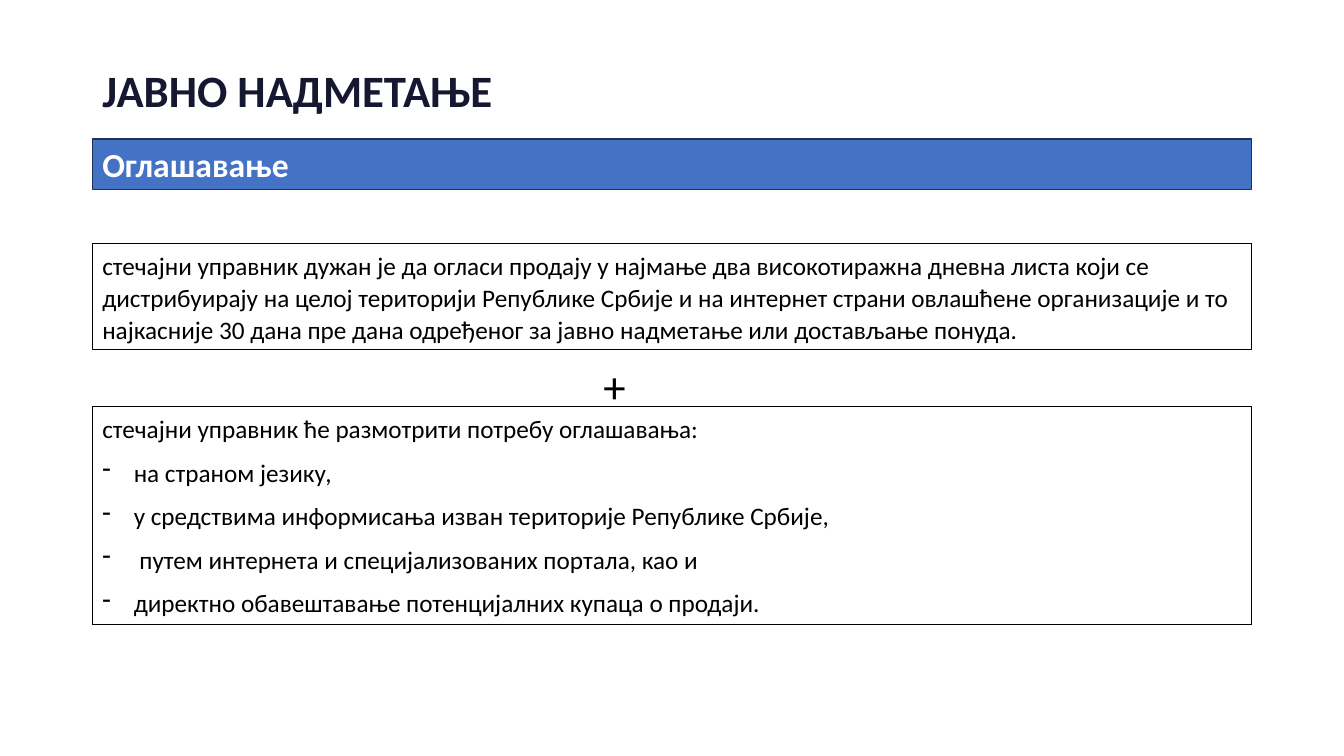
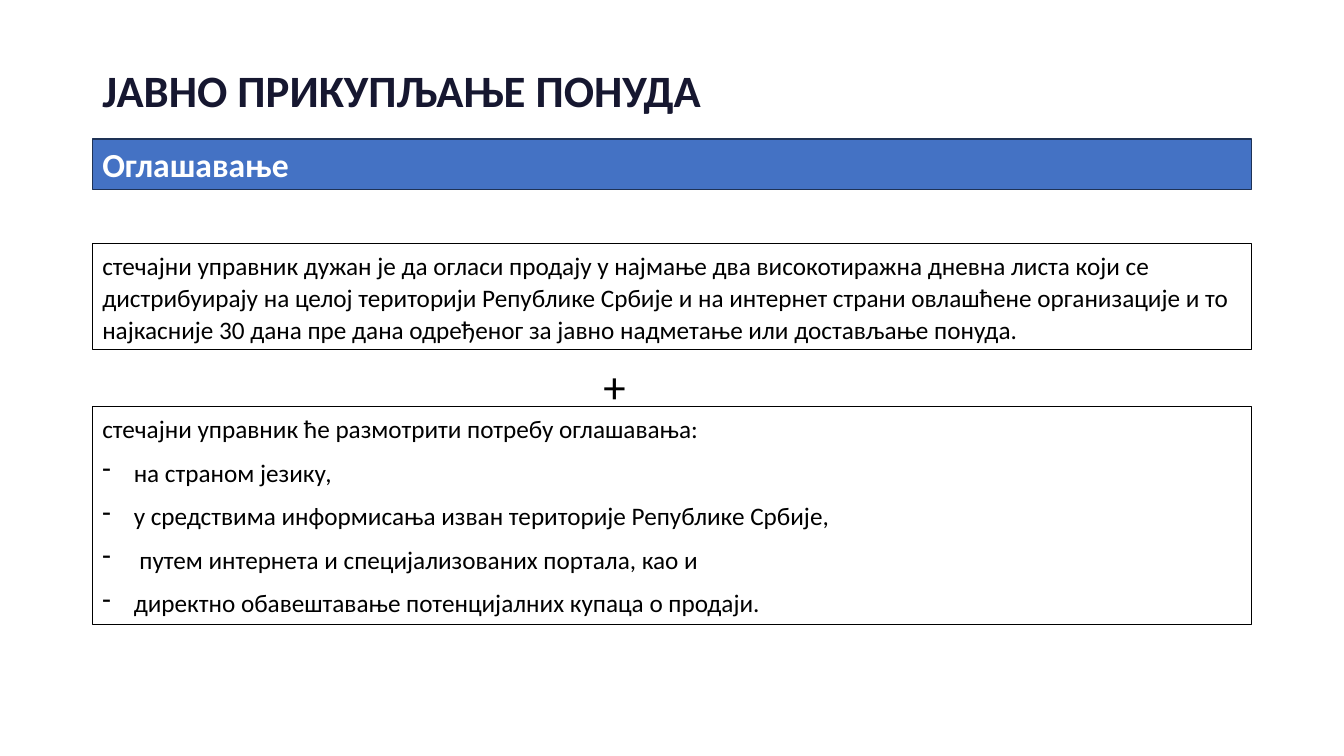
from lxml.etree import SubElement
from pptx import Presentation
from pptx.dml.color import RGBColor
from pptx.enum.shapes import MSO_SHAPE
from pptx.enum.text import MSO_ANCHOR, MSO_AUTO_SIZE, PP_ALIGN
from pptx.oxml.ns import qn
from pptx.util import Pt

COLORS = {
    "title": "161730",
    "band": "4472C4",
    "band_line": "1E3256",
    "band_text": "FFFFFF",
    "body": "000000",
}
FONT = "Calibri"
LEFT, WIDTH = 66, 828
BULLET_INDENT = 22.5

TITLES = ["ЈАВНО НАДМЕТАЊЕ", "ЈАВНО ПРИКУПЉАЊЕ ПОНУДА"]
NOTICE = (
    "стечајни управник дужан је да огласи продају у најмање два високотиражна "
    "дневна листа који се дистрибуирају на целој територији Републике Србије и на "
    "интернет страни овлашћене организације и то најкасније 30 дана пре дана "
    "одређеног за јавно надметање или достављање понуда."
)
CHANNELS_INTRO = "стечајни управник ће размотрити потребу оглашавања:"
CHANNELS = [
    "на страном језику,",
    "у средствима информисања изван територије Републике Србије,",
    " путем интернета и специјализованих портала, као и",
    "директно обавештавање потенцијалних купаца о продаји.",
]


def rgb(name):
    return RGBColor.from_string(COLORS[name])


class Deck:
    def __init__(self):
        self.presentation = Presentation()
        self.presentation.slide_width = Pt(960)
        self.presentation.slide_height = Pt(540)
        self.slide = None

    def add_slide(self):
        self.slide = self.presentation.slides.add_slide(self.presentation.slide_layouts[6])

    def set_text(self, shape, texts, size, color="body", bold=False, spacing=1.07,
                 after=8, bullets_from=None, wrap=True):
        """Fill a shape with paragraphs, dashed from index bullets_from on."""
        frame = shape.text_frame
        frame.word_wrap = wrap
        frame.auto_size = MSO_AUTO_SIZE.SHAPE_TO_FIT_TEXT
        frame.vertical_anchor = MSO_ANCHOR.TOP
        for index, text in enumerate(texts):
            paragraph = frame.add_paragraph() if index else frame.paragraphs[0]
            paragraph.text = text
            paragraph.alignment = PP_ALIGN.LEFT
            paragraph.line_spacing = spacing
            paragraph.space_after = Pt(after)
            if bullets_from is not None and index >= bullets_from:
                self.add_dash(paragraph)
            font = paragraph.font
            font.name, font.size, font.bold = FONT, Pt(size), bold
            font.color.rgb = rgb(color)

    def add_dash(self, paragraph):
        properties = paragraph._p.get_or_add_pPr()
        properties.set("marL", str(Pt(BULLET_INDENT)))
        properties.set("indent", str(-Pt(BULLET_INDENT)))
        SubElement(properties, qn("a:buChar"), char="-")

    def text_box(self, left, top, width, height):
        return self.slide.shapes.add_textbox(Pt(left), Pt(top), Pt(width), Pt(height))

    def rectangle(self, top, height, line, line_width, fill=None):
        shape = self.slide.shapes.add_shape(
            MSO_SHAPE.RECTANGLE, Pt(LEFT), Pt(top), Pt(WIDTH), Pt(height))
        shape.shadow.inherit = False
        if fill:
            shape.fill.solid()
            shape.fill.fore_color.rgb = rgb(fill)
        else:
            shape.fill.background()
        shape.line.color.rgb = rgb(line)
        shape.line.width = Pt(line_width)
        return shape

    def title(self, text):
        box = self.text_box(LEFT, 44.6, WIDTH, 42.5)
        self.set_text(box, [text], 32, "title", bold=True, spacing=0.9, after=0)
        box.text_frame.vertical_anchor = MSO_ANCHOR.BOTTOM

    def band(self, text):
        shape = self.rectangle(99.4, 36, "band_line", 1, fill="band")
        self.set_text(shape, [text], 24, "band_text", bold=True, spacing=1.0, after=0)

    def outlined_box(self, top, height, texts, bullets_from=None):
        shape = self.rectangle(top, height, "body", 0.25)
        self.set_text(shape, texts, 18, bullets_from=bullets_from)

    def plus_sign(self):
        self.set_text(self.text_box(424, 249.8, 26.6, 46.8), ["+"], 32, wrap=False)


def main():
    deck = Deck()
    for title in TITLES:
        deck.add_slide()
        deck.band("Оглашавање")
        deck.outlined_box(173.5, 76.3, [NOTICE])
        deck.plus_sign()
        deck.outlined_box(290.2, 155.5, [CHANNELS_INTRO, *CHANNELS], bullets_from=1)
        deck.title(title)
    deck.presentation.save("out.pptx")


if __name__ == "__main__":
    main()
